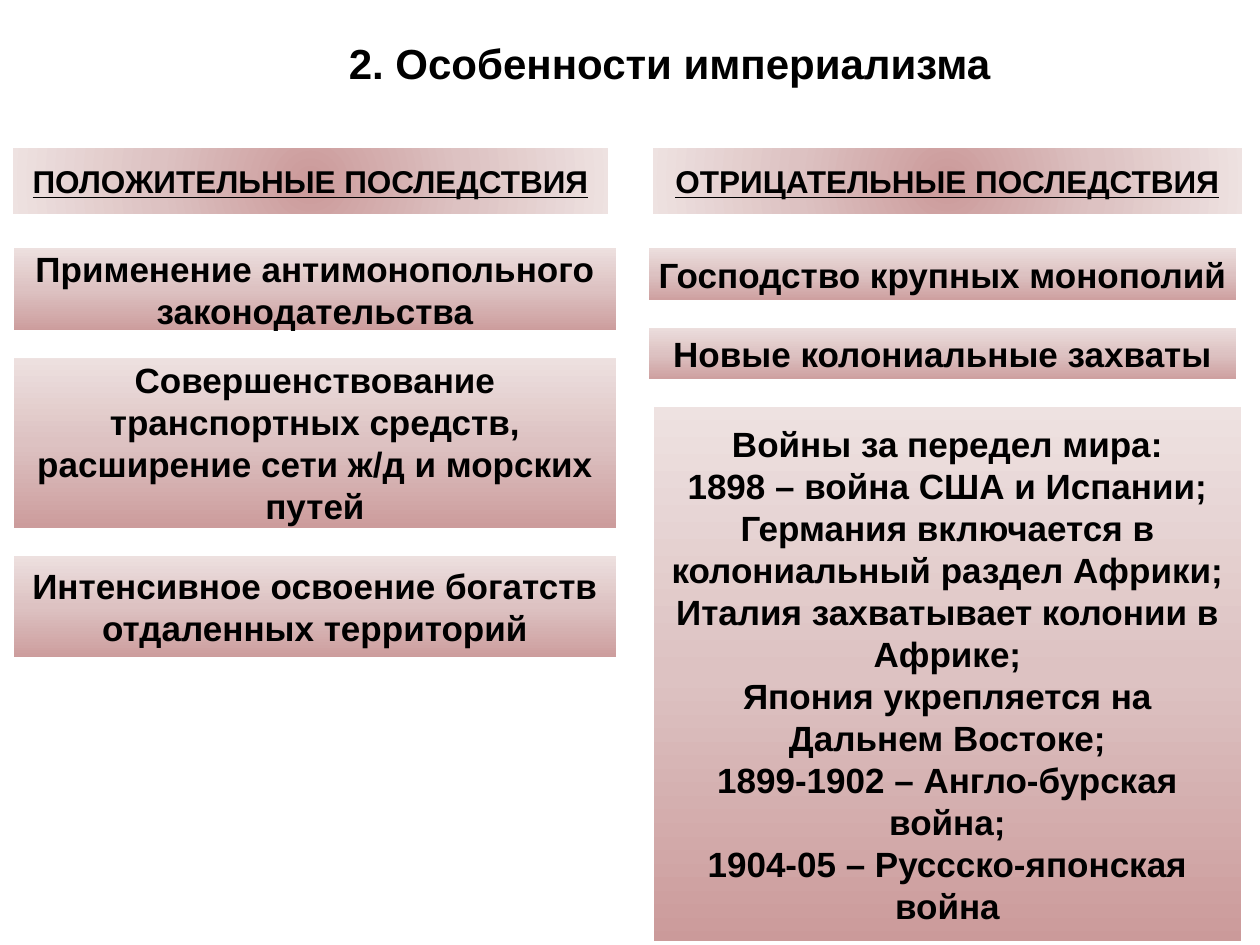
from copy import deepcopy

from pptx import Presentation
from pptx.dml.color import RGBColor
from pptx.enum import shapes, text
from pptx.oxml import parse_xml
from pptx.oxml.ns import nsdecls, qn
from pptx.util import Cm, Pt

BLACK = RGBColor(0x00, 0x00, 0x00)
WHITE = RGBColor(0xFF, 0xFF, 0xFF)
ROSE = RGBColor(0xCB, 0x9A, 0x9A)
PINK = RGBColor(0xDD, 0xC2, 0xC2)
PALE = RGBColor(0xEE, 0xE2, 0xE1)

TOP = 4.93
GAP = 0.4

POSITIVE = [
    (1.8, ["Применение антимонопольного законодательства"]),
    (3.6, ["Совершенствование транспортных средств, расширение сети ж/д и морских путей"]),
    (2.2, ["Интенсивное освоение богатств отдаленных территорий"]),
]
NEGATIVE = [
    (1.2, ["Господство крупных монополий"]),
    (1.2, ["Новые колониальные захваты"]),
]
WARS = [
    "Войны за передел мира:",
    "1898 – война США и Испании;",
    "Германия включается в колониальный раздел Африки;",
    "Италия захватывает колонии в Африке;",
    "Япония укрепляется на Дальнем Востоке;",
    "1899-1902 – Англо-бурская война;",
    "1904-05 – Руссско-японская война",
]


def write_text(shape, lines, size=20, underline=None, wrap=True, hanging=0,
               anchor=text.MSO_ANCHOR.MIDDLE):
    frame = shape.text_frame
    frame.word_wrap = wrap
    frame.vertical_anchor = anchor
    frame.text = "\n".join(lines)
    for paragraph in frame.paragraphs:
        paragraph.alignment = text.PP_ALIGN.CENTER
        if hanging:
            properties = paragraph._p.get_or_add_pPr()
            properties.set("marL", str(Cm(hanging)))
            properties.set("indent", str(-Cm(hanging)))
        for run in paragraph.runs:
            run.font.name = "Arial"
            run.font.size = Pt(size)
            run.font.bold = True
            run.font.underline = underline
            run.font.color.rgb = BLACK


def fill_gradient(shape, radial):
    shape.fill.gradient()
    shape.fill.gradient_angle = 90
    gradient = shape._element.spPr.find(qn("a:gradFill"))
    stop_list = gradient.find(qn("a:gsLst"))
    stop_list.insert(1, deepcopy(stop_list[0]))
    for index, (stop, color) in enumerate(zip(shape.fill.gradient_stops, (ROSE, PINK, PALE))):
        stop.position = index / 2
        stop.color.rgb = color
    if radial:
        circle = parse_xml(
            f'<a:path {nsdecls("a")} path="circle">'
            '<a:fillToRect l="50000" t="50000" r="50000" b="50000"/></a:path>'
        )
        gradient.replace(gradient.find(qn("a:lin")), circle)


def add_panel(slide, left, top, width, height, lines, radial=False, border=4.5, **text_format):
    shape = slide.shapes.add_shape(
        shapes.MSO_SHAPE.RECTANGLE, Cm(left), Cm(top), Cm(width), Cm(height))
    shape.shadow.inherit = False
    fill_gradient(shape, radial)
    shape.line.color.rgb = WHITE
    shape.line.width = Pt(border)
    write_text(shape, lines, **text_format)


def add_title(slide, left, top, width, height, title):
    box = slide.shapes.add_textbox(Cm(left), Cm(top), Cm(width), Cm(height))
    write_text(box, [title], size=24, anchor=text.MSO_ANCHOR.TOP)
    box.text_frame.auto_size = text.MSO_AUTO_SIZE.SHAPE_TO_FIT_TEXT


def add_heading(slide, left, top, width, height, heading):
    add_panel(slide, left, top, width, height, [heading], radial=True, border=4,
              size=18, underline=True, wrap=False, hanging=0.95)


def add_column(slide, left, top, width, items):
    for height, lines in items:
        add_panel(slide, left, top, width, height, lines)
        top += height + GAP
    return top


def main():
    presentation = Presentation()
    presentation.slide_width = Cm(25.4)
    presentation.slide_height = Cm(19.05)
    slide = presentation.slides.add_slide(presentation.slide_layouts[6])

    add_title(slide, 1.9, 0.63, 23.2, 1.27, "2. Особенности империализма")
    add_heading(slide, 0.2, 2.92, 12.12, 1.47, "ПОЛОЖИТЕЛЬНЫЕ ПОСЛЕДСТВИЯ")
    add_heading(slide, 13.1, 2.92, 12, 1.47, "ОТРИЦАТЕЛЬНЫЕ ПОСЛЕДСТВИЯ")
    add_column(slide, 0.2, TOP, 12.3, POSITIVE)
    wars_top = add_column(slide, 13, TOP, 12, NEGATIVE)
    add_panel(slide, 13.1, wars_top, 12, 10.92, WARS)

    presentation.save("out.pptx")


if __name__ == "__main__":
    main()
